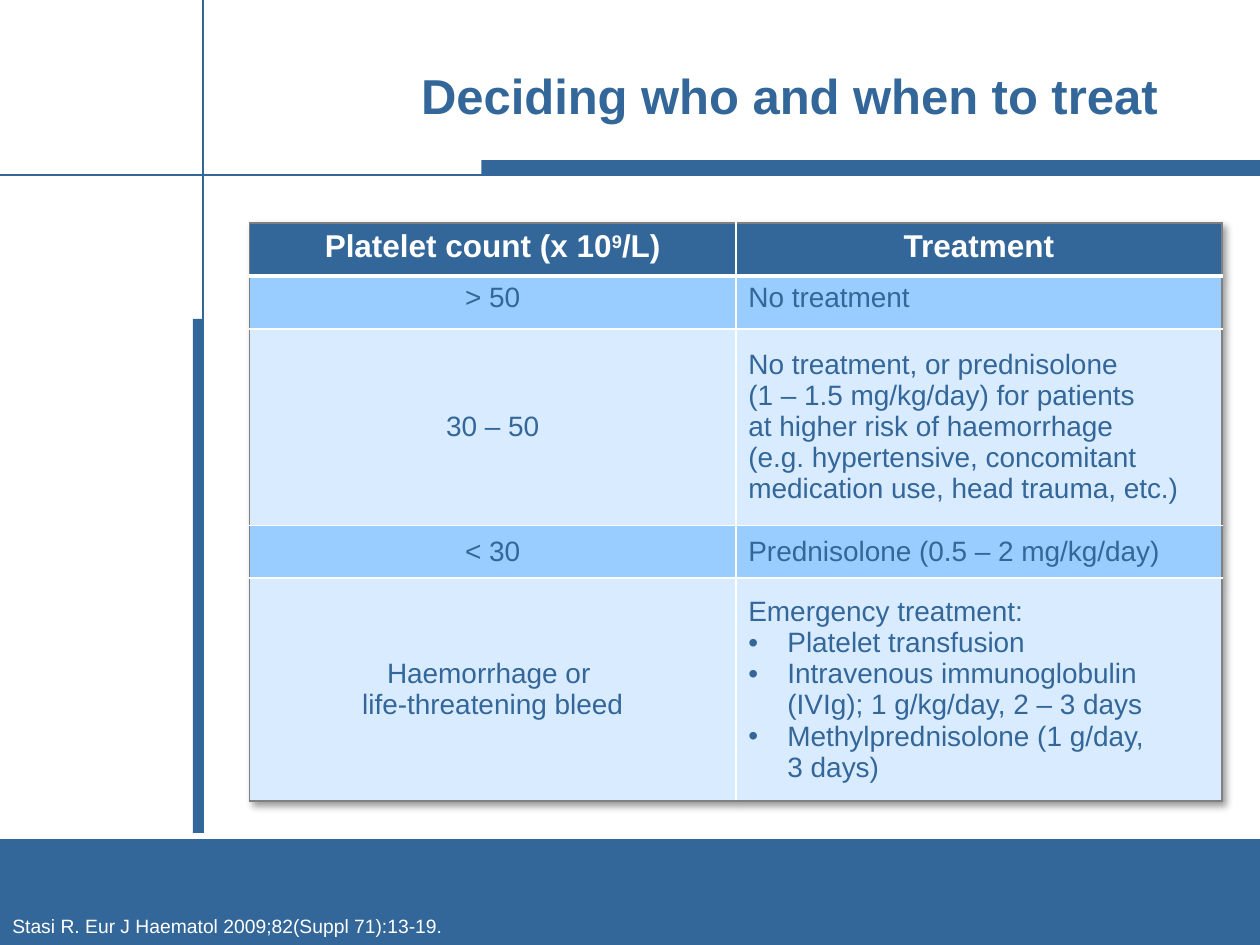
from copy import deepcopy
from dataclasses import dataclass
from typing import NamedTuple

from lxml import etree
from pptx import Presentation
from pptx import util as u
from pptx.dml.color import RGBColor
from pptx.enum import shapes, text
from pptx.oxml import parse_xml
from pptx.oxml.ns import nsdecls, qn


@dataclass(frozen=True)
class Theme:
    font: str = "Arial"
    blue: str = "336699"
    sky: str = "99CCFF"
    pale: str = "D9ECFF"
    white: str = "FFFFFF"
    grey: str = "808080"
    title_size: int = 28
    header_size: int = 18
    body_size: int = 16
    source_size: int = 11


class Area(NamedTuple):
    column: float
    row: float
    columns: float
    rows: float


class TableRow(NamedTuple):
    height: float
    count: str
    treatment: str
    anchor: text.MSO_ANCHOR = text.MSO_ANCHOR.MIDDLE


THEME = Theme()
COLUMNS, ROWS = 100, 75
UNIT = u.Inches(10) // COLUMNS
LEFT, CENTER = text.PP_ALIGN.LEFT, text.PP_ALIGN.CENTER
TOP, MIDDLE = text.MSO_ANCHOR.TOP, text.MSO_ANCHOR.MIDDLE

TABLE_AREA = Area(19.8, 17.7, 77.2, 45.9)
TABLE_ROWS = [
    TableRow(4.2, "Platelet count (x 10^9^/L)", "Treatment", TOP),
    TableRow(4.2, "> 50", "No treatment", TOP),
    TableRow(15.6, "30 – 50",
             "No treatment, or prednisolone \v(1 – 1.5 mg/kg/day) for patients \v"
             "at higher risk of haemorrhage \v"
             "(e.g. hypertensive, concomitant medication use, head trauma, etc.)"),
    TableRow(4.2, "< 30", "Prednisolone (0.5 – 2 mg/kg/day)"),
    TableRow(17.7, "Haemorrhage or \vlife-threatening bleed",
             "Emergency treatment:\n• Platelet transfusion\n"
             "• Intravenous immunoglobulin (IVIg); 1 g/kg/day, 2 – 3 days\n"
             "• Methylprednisolone (1 g/day, \v3 days)"),
]


def grid(value: float) -> int:
    return round(value * UNIT)


def place(area: Area) -> list[int]:
    return [grid(value) for value in area]


def add_bullet(paragraph) -> None:
    properties = paragraph._p.get_or_add_pPr()
    indent = u.Inches(0.31)
    properties.set("marL", str(indent))
    properties.set("indent", str(-indent))
    etree.SubElement(properties, qn("a:buFont")).set("typeface", THEME.font)
    etree.SubElement(properties, qn("a:buChar")).set("char", "•")


def write_text(frame, content: str, *, size: int, color: str, bold: bool = False,
               align=LEFT, anchor=TOP) -> None:
    frame.word_wrap = True
    frame.vertical_anchor = anchor
    for index, line in enumerate(content.split("\n")):
        paragraph = frame.add_paragraph() if index else frame.paragraphs[0]
        paragraph.alignment = align
        if line.startswith("• "):
            add_bullet(paragraph)
            line = line.removeprefix("• ")
        for part_index, part in enumerate(line.split("\v")):
            if part_index:
                paragraph.add_line_break()
            for run_index, words in enumerate(part.split("^")):
                run = paragraph.add_run()
                run.text = words
                run.font.name = THEME.font
                run.font.size = u.Pt(size)
                run.font.bold = bold
                run.font.color.rgb = RGBColor.from_string(color)
                if run_index % 2:
                    run.font._element.set("baseline", "30000")
        for line_break in paragraph._p.findall(qn("a:br")):
            line_break.append(deepcopy(paragraph.runs[0].font._element))


def add_text(slide, area: Area, content: str, **style) -> None:
    box = slide.shapes.add_textbox(*place(area))
    write_text(box.text_frame, content, **style)


def add_bar(slide, area: Area) -> None:
    shape = slide.shapes.add_shape(shapes.MSO_SHAPE.RECTANGLE, *place(area))
    shape.shadow.inherit = False
    shape.fill.solid()
    shape.fill.fore_color.rgb = RGBColor.from_string(THEME.blue)
    shape.line.fill.background()


def add_rule(slide, area: Area) -> None:
    left, top, width, height = place(area)
    connector = slide.shapes.add_connector(
        shapes.MSO_CONNECTOR.STRAIGHT, left, top, left + width, top + height)
    connector.line.color.rgb = RGBColor.from_string(THEME.blue)
    connector.line.width = u.Pt(1)
    etree.SubElement(connector._element.spPr, qn("a:effectLst"))


def set_borders(cell, row: int, column: int, last_row: int) -> None:
    borders = {
        "L": (THEME.white if column else THEME.grey, 1),
        "R": (THEME.grey if column else THEME.white, 1),
        "T": (THEME.white if row else THEME.grey, 3 if row == 1 else 1),
        "B": (THEME.grey if row == last_row else THEME.white, 1 if row else 3),
    }
    properties = cell._tc.get_or_add_tcPr()
    for index, (side, (color, width)) in enumerate(borders.items()):
        properties.insert(index, parse_xml(
            f'<a:ln{side} {nsdecls("a")} w="{u.Pt(width)}"><a:solidFill>'
            f'<a:srgbClr val="{color}"/></a:solidFill></a:ln{side}>'))


def add_table_shadow(table) -> None:
    table._tbl.tblPr.insert(0, parse_xml(
        f'<a:effectLst {nsdecls("a")}><a:outerShdw blurRad="50800" dist="38100" '
        'dir="2700000" algn="tl" rotWithShape="0"><a:srgbClr val="000000">'
        '<a:alpha val="40000"/></a:srgbClr></a:outerShdw></a:effectLst>'))


def add_treatment_table(slide) -> None:
    table = slide.shapes.add_table(len(TABLE_ROWS), 2, *place(TABLE_AREA)).table
    add_table_shadow(table)
    for row, entry in enumerate(TABLE_ROWS):
        table.rows[row].height = grid(entry.height)
        header = row == 0
        fill = THEME.blue if header else THEME.sky if row % 2 else THEME.pale
        for column, content in enumerate((entry.count, entry.treatment)):
            cell = table.cell(row, column)
            cell.fill.solid()
            cell.fill.fore_color.rgb = RGBColor.from_string(fill)
            set_borders(cell, row, column, len(TABLE_ROWS) - 1)
            write_text(cell.text_frame, content, bold=header,
                       size=THEME.header_size if header else THEME.body_size,
                       color=THEME.white if header else THEME.blue,
                       align=CENTER if header or column == 0 else LEFT)
            cell.vertical_anchor = entry.anchor


def main() -> None:
    presentation = Presentation()
    presentation.slide_width = grid(COLUMNS)
    presentation.slide_height = grid(ROWS)
    slide = presentation.slides.add_slide(presentation.slide_layouts[6])

    add_bar(slide, Area(0, 66.6, COLUMNS, 8.4))
    add_bar(slide, Area(15.3, 25.3, 0.8, 40.8))
    add_rule(slide, Area(16.1, 0, 0, 66.1))
    add_bar(slide, Area(38.2, 12.7, 61.8, 1.2))
    add_rule(slide, Area(0, 13.9, COLUMNS, 0))
    add_text(slide, Area(27.2, 4.4, 70.9, 6.3), "Deciding who and when to treat",
             size=THEME.title_size, color=THEME.blue, bold=True,
             align=CENTER, anchor=MIDDLE)
    add_treatment_table(slide)
    add_text(slide, Area(0, 72.1, COLUMNS, 2.9),
             "Stasi R. Eur J Haematol 2009;82(Suppl 71):13-19.",
             size=THEME.source_size, color=THEME.white)
    presentation.save("out.pptx")


if __name__ == "__main__":
    main()
